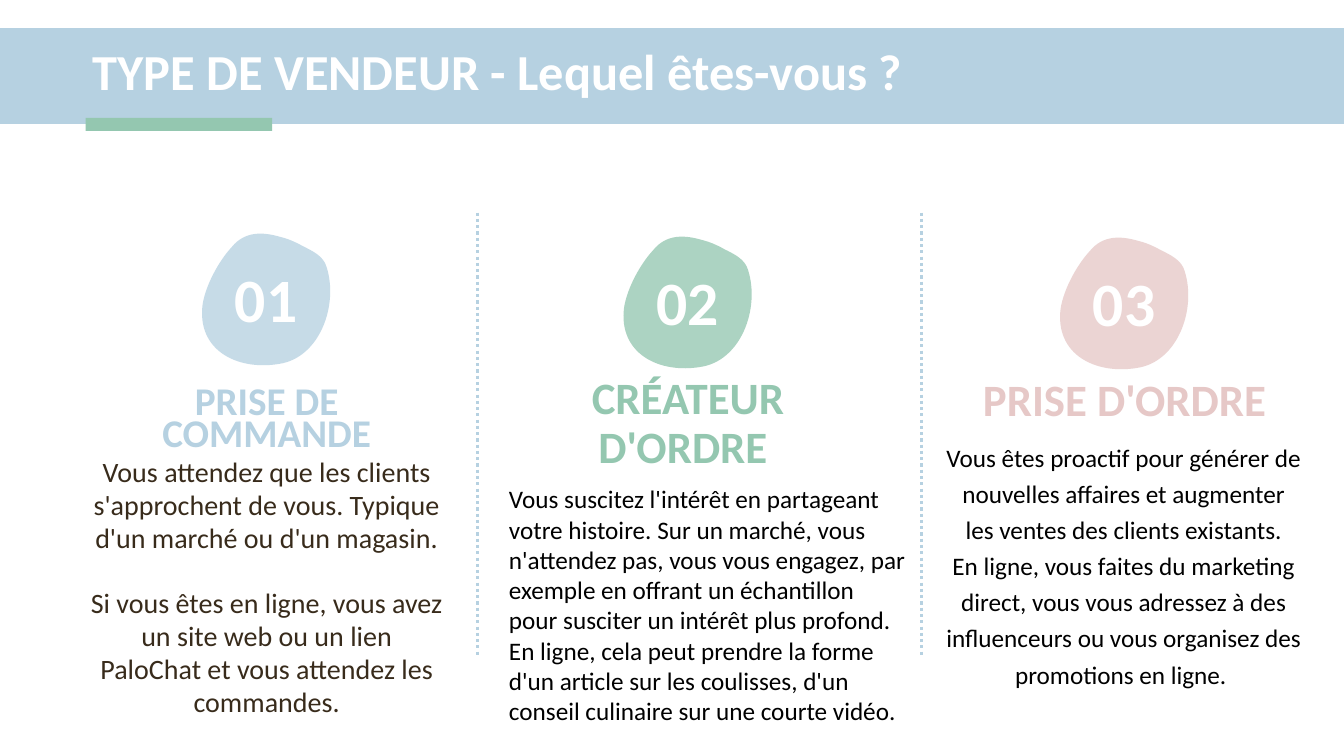
from dataclasses import dataclass

from lxml import etree
from pptx import Presentation
from pptx.dml.color import RGBColor
from pptx.enum import dml, shapes, text
from pptx.oxml import ns
from pptx.util import Inches, Pt

TITLE = "TYPE DE VENDEUR - Lequel êtes-vous ?"
PASSIVE_HEADING = "PRISE DE COMMANDE"
PASSIVE_TEXT = [
    "Vous attendez que les clients s'approchent de vous. Typique d'un marché ou d'un magasin.",
    "Si vous êtes en ligne, vous avez un site web ou un lien PaloChat et vous attendez les commandes.",
]
CREATOR_HEADING = "CRÉATEUR D'ORDRE "
CREATOR_TEXT = [
    "Vous suscitez l'intérêt en partageant votre histoire. Sur un marché, vous n'attendez pas, "
    "vous vous engagez, par exemple en offrant un échantillon pour susciter un intérêt plus profond.",
    "En ligne, cela peut prendre la forme d'un article sur les coulisses, d'un conseil culinaire "
    "sur une courte vidéo.",
]
PROACTIVE_HEADING = "PRISE D'ORDRE"
PROACTIVE_TEXT = [
    "Vous êtes proactif pour générer de nouvelles affaires et augmenter les ventes des clients existants.",
    "En ligne, vous faites du marketing direct, vous vous adressez à des influenceurs ou vous "
    "organisez des promotions en ligne. ",
]


@dataclass(frozen=True)
class Theme:
    font: str = "Calibri"
    blue: str = "B6D1E1"
    green: str = "94C7B0"
    pink: str = "E6C8C7"
    white: str = "FFFFFF"
    brown: str = "382B1B"
    black: str = "000000"
    title: int = 36
    heading: int = 32
    small_heading: int = 28
    number: int = 44
    large_body: int = 20
    body: int = 18
    leading: float = 23.4
    loose_leading: float = 25.8
    blob_alpha: int = 77


THEME = Theme()
BADGES = [
    ("01", 2.01, 2.32, THEME.blue),
    ("02", 6.19, 2.35, THEME.green),
    ("03", 10.52, 2.36, THEME.pink),
]
DIVIDERS = [4.74, 9.14]
BLOB_SIZE = (1.27, 1.31)
BLOB_START = (0.77, 0.03)
BLOB_CURVES = [
    ((0.60, -0.02), (0.42, -0.03), (0.29, 0.13)),
    ((0.16, 0.27), (0.03, 0.51), (0, 0.70)),
    ((-0.06, 1.16), (0.35, 1.36), (0.76, 1.29)),
    ((1.16, 1.23), (1.35, 0.71), (1.23, 0.33)),
    ((1.20, 0.22), (1.09, 0.17), (0.99, 0.12)),
    ((0.92, 0.08), (0.85, 0.05), BLOB_START),
]


def place(shape, left, top, width, height):
    shape.left, shape.top = Inches(left), Inches(top)
    shape.width, shape.height = Inches(width), Inches(height)


def paint(shape, color):
    shape.shadow.inherit = False
    shape.fill.solid()
    shape.fill.fore_color.rgb = RGBColor.from_string(color)
    shape.line.fill.background()


def add_bar(slide, left, top, width, height, color):
    bar = slide.shapes.add_shape(
        shapes.MSO_SHAPE.RECTANGLE, Inches(left), Inches(top), Inches(width), Inches(height))
    paint(bar, color)
    return bar


def write(frame, lines, size, color, bold=False, align=text.PP_ALIGN.CENTER, spacing=1.0):
    frame.word_wrap = True
    frame.auto_size = text.MSO_AUTO_SIZE.NONE
    frame.text = "\n".join(lines)
    for paragraph in frame.paragraphs:
        paragraph.alignment = align
        paragraph.line_spacing = spacing
        paragraph.space_before = Pt(0)
        style(paragraph, size, color, bold)


def style(paragraph, size, color, bold):
    for run in paragraph.runs:
        run.font.name = THEME.font
        run.font.size = Pt(size)
        run.font.bold = bold
        run.font.color.rgb = RGBColor.from_string(color)


def add_text(slide, left, top, width, height, lines, size, color, **options):
    box = slide.shapes.add_textbox(Inches(left), Inches(top), Inches(width), Inches(height))
    write(box.text_frame, lines, size, color, **options)


def remove_bullet(paragraph):
    properties = paragraph._p.get_or_add_pPr()
    properties.set("marL", "0")
    properties.set("indent", "0")
    etree.SubElement(properties, ns.qn("a:buNone"))


def add_path_step(outline, tag, points):
    step = etree.SubElement(outline, ns.qn(tag))
    for x, y in points:
        point = etree.SubElement(step, ns.qn("a:pt"))
        point.set("x", str(Inches(x)))
        point.set("y", str(Inches(y)))


def add_blob(slide, left, top, color):
    width, height = BLOB_SIZE
    right, bottom = Inches(left + width), Inches(top + height)
    builder = slide.shapes.build_freeform(Inches(left), Inches(top))
    builder.add_line_segments([(right, Inches(top)), (right, bottom), (Inches(left), bottom)])
    blob = builder.convert_to_shape()
    outline = next(blob._element.iter(ns.qn("a:path")))
    for step in list(outline):
        outline.remove(step)
    add_path_step(outline, "a:moveTo", [BLOB_START])
    for curve in BLOB_CURVES:
        add_path_step(outline, "a:cubicBezTo", curve)
    etree.SubElement(outline, ns.qn("a:close"))
    paint(blob, color)
    color_element = blob._element.spPr.find(ns.qn("a:solidFill"))[0]
    alpha = etree.SubElement(color_element, ns.qn("a:alpha"))
    alpha.set("val", str(THEME.blob_alpha * 1000))


def add_badge(slide, number, left, top, color):
    add_blob(slide, left, top, color)
    add_text(slide, left, top + 0.63, 1.26, 1.05, [number], THEME.number, THEME.white,
             bold=True, spacing=Pt(THEME.leading))


def add_divider(slide, x):
    line = slide.shapes.add_connector(
        shapes.MSO_CONNECTOR.STRAIGHT, Inches(x), Inches(2.11), Inches(x), Inches(6.5))
    line.line.color.rgb = RGBColor.from_string(THEME.blue)
    line.line.width = Pt(2.25)
    line.line.dash_style = dml.MSO_LINE.ROUND_DOT
    etree.SubElement(line._element.spPr, ns.qn("a:effectLst"))


def main():
    presentation = Presentation()
    presentation.slide_width, presentation.slide_height = Inches(13.33), Inches(7.5)
    slide = presentation.slides.add_slide(presentation.slide_layouts[1])
    title, body = slide.placeholders

    bars = [add_bar(slide, 0, 0.28, 13.33, 0.95, THEME.blue),
            add_bar(slide, 0.85, 1.17, 1.85, 0.13, THEME.green)]
    for bar in bars:
        title._element.addprevious(bar._element)

    place(title, 0.82, 0.34, 11.93, 0.79)
    write(title.text_frame, [TITLE], THEME.title, THEME.white, bold=True,
          align=text.PP_ALIGN.LEFT, spacing=0.9)
    title.text_frame.vertical_anchor = text.MSO_ANCHOR.MIDDLE

    place(body, 0.78, 3.82, 3.73, 1.14)
    write(body.text_frame, [PASSIVE_HEADING, *PASSIVE_TEXT], THEME.large_body, THEME.brown,
          spacing=Pt(THEME.leading))
    for paragraph in body.text_frame.paragraphs:
        remove_bullet(paragraph)
    style(body.text_frame.paragraphs[0], THEME.small_heading, THEME.blue, True)
    body.text_frame.paragraphs[-1].space_before = Pt(THEME.leading)

    add_text(slide, 4.96, 3.68, 3.73, 1.14, [CREATOR_HEADING], THEME.heading, THEME.green,
             bold=True, spacing=0.9)
    add_text(slide, 4.95, 4.75, 4.13, 2.52, CREATOR_TEXT, THEME.body, THEME.black,
             align=text.PP_ALIGN.LEFT)
    add_text(slide, 9.29, 3.7, 3.73, 1.14, [PROACTIVE_HEADING], THEME.heading, THEME.pink,
             bold=True, spacing=0.9)
    add_text(slide, 9.28, 4.28, 3.73, 1.54, PROACTIVE_TEXT, THEME.body, THEME.black,
             spacing=Pt(THEME.loose_leading))

    for badge in BADGES:
        add_badge(slide, *badge)
    for x in DIVIDERS:
        add_divider(slide, x)

    presentation.save("out.pptx")


if __name__ == "__main__":
    main()
